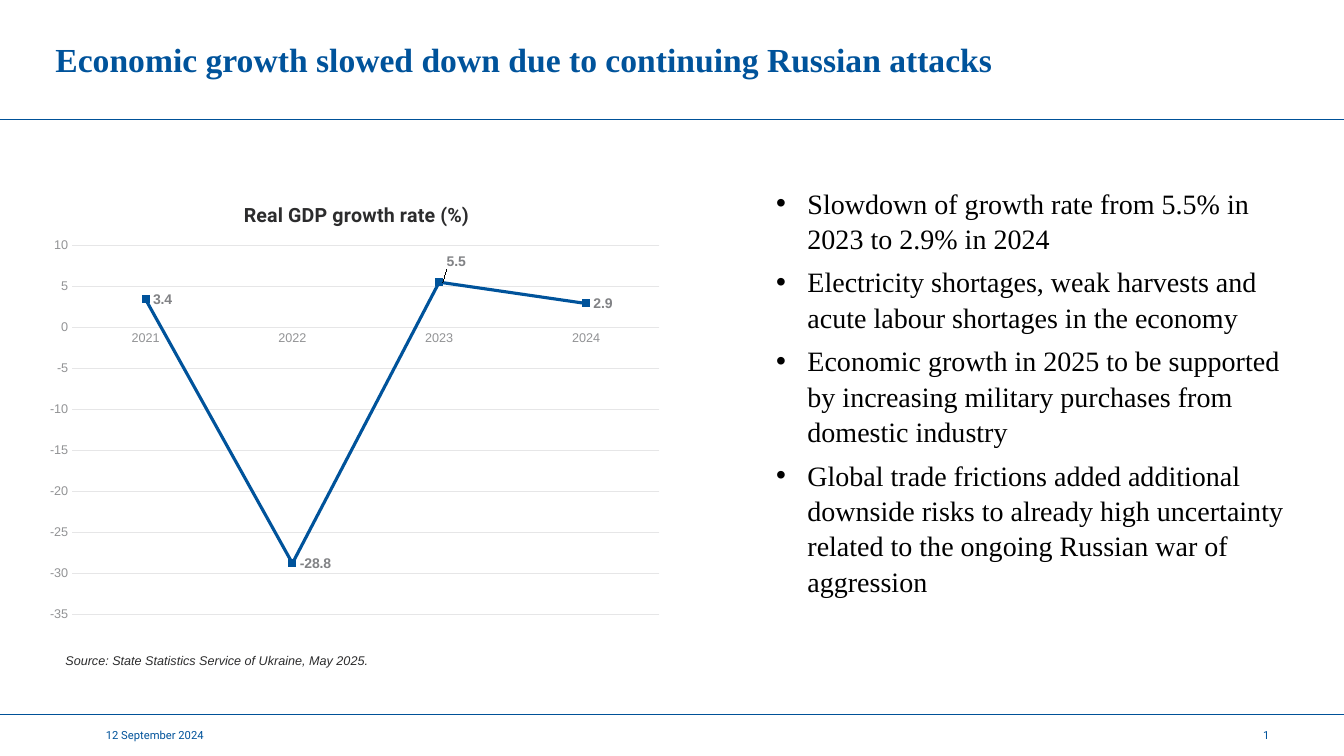
from lxml import etree
from pptx import Presentation
from pptx.chart.data import CategoryChartData
from pptx.dml.color import RGBColor
from pptx.enum.chart import XL_CHART_TYPE, XL_LABEL_POSITION, XL_TICK_MARK
from pptx.enum.shapes import MSO_CONNECTOR
from pptx.enum.text import MSO_ANCHOR, PP_ALIGN
from pptx.oxml import parse_xml
from pptx.oxml.ns import nsdecls, qn
from pptx.util import Inches, Pt

TITLE = "Economic growth slowed down due to continuing Russian attacks"
POINTS = [
    "Slowdown of growth rate from 5.5% in 2023 to 2.9% in 2024",
    "Electricity shortages, weak harvests and acute labour shortages in the economy",
    "Economic growth in 2025 to be supported by increasing military purchases from domestic industry",
    "Global trade frictions added additional downside risks to already high uncertainty "
    "related to the ongoing Russian war of aggression",
]
CHART_TITLE = "Real GDP growth rate (%)"
GROWTH = {"2021": 3.4, "2022": -28.8, "2023": 5.5, "2024": 2.9}
RAISED_LABEL = 2
SOURCE = "Source: State Statistics Service of Ukraine, May 2025."
DATE, PAGE = "12 September 2024", "1"

COLORS = {"blue": "00539B", "rule": "005198", "dark": "2C2C2D", "black": "000000",
          "axis": "929395", "label": "818285", "grid": "E6E6E7", "text": "58595B"}
SERIF, SANS, ROBOTO = "Times New Roman", "Arial", "Roboto"
WIDTH, HEIGHT = 13.33, 7.5
HEADER, FOOTER = 1.18, 7.09
MARGIN, BODY_TOP, INDENT = 0.55, 1.78, 0.31
CHART_LEFT, CHART_WIDTH, CHART_HEIGHT = 0.37, 6.29, 4.48


def color(name):
    return RGBColor.from_string(COLORS[name])


def style(font, size, face, tint, bold=False, italic=False):
    font.size, font.name, font.bold, font.italic = Pt(size), face, bold, italic
    font.color.rgb = color(tint)


def add_text(slide, box, lines, look, inset=True, anchor=MSO_ANCHOR.TOP,
             align=PP_ALIGN.LEFT, bulleted=False):
    frame = slide.shapes.add_textbox(*map(Inches, box)).text_frame
    frame.word_wrap = True
    frame.vertical_anchor = anchor
    if not inset:
        frame.margin_left = frame.margin_right = frame.margin_top = frame.margin_bottom = 0
    for i, line in enumerate(lines):
        paragraph = frame.add_paragraph() if i else frame.paragraphs[0]
        paragraph.alignment = align
        if bulleted:
            paragraph.space_after = Pt(6)
            paragraph.line_spacing = 1.05
            properties = paragraph._p.get_or_add_pPr()
            properties.set("marL", str(Inches(INDENT)))
            properties.set("indent", str(-Inches(INDENT)))
            etree.SubElement(properties, qn("a:buFont"), typeface=SANS)
            etree.SubElement(properties, qn("a:buChar"), char="•")
        run = paragraph.add_run()
        run.text = line
        style(run.font, *look)


def add_rule(slide, y):
    rule = slide.shapes.add_connector(MSO_CONNECTOR.STRAIGHT, 0, Inches(y), Inches(WIDTH), Inches(y))
    rule.line.color.rgb = color("rule")
    rule.line.width = Pt(0.25)
    etree.SubElement(rule._element.spPr, qn("a:effectLst"))


def manual_layout(inner=False, **shares):
    """Chart layout element placing a part by shares of the chart's size."""
    target = '<c:layoutTarget val="inner"/>' if inner else ""
    modes = '<c:xMode val="edge"/><c:yMode val="edge"/>' if shares.pop("edge", True) else ""
    values = "".join(f'<c:{key} val="{value}"/>' for key, value in shares.items())
    return parse_xml(f'<c:layout {nsdecls("c")}><c:manualLayout>{target}{modes}{values}'
                     '</c:manualLayout></c:layout>')


def place(parent, layout, after=None):
    for old in parent.findall(qn("c:layout")):
        parent.remove(old)
    if after is None:
        parent.insert(0, layout)
    else:
        parent.find(qn(after)).addnext(layout)


def add_growth_chart(slide):
    data = CategoryChartData()
    data.categories = list(GROWTH)
    data.add_series("Series 1", list(GROWTH.values()))
    box = map(Inches, (CHART_LEFT, BODY_TOP, CHART_WIDTH, CHART_HEIGHT))
    chart = slide.shapes.add_chart(XL_CHART_TYPE.LINE, *box, data).chart
    style(chart.font, 10, SANS, "text")
    chart.has_legend = False

    heading = chart.chart_title.text_frame.paragraphs[0].add_run()
    heading.text = CHART_TITLE
    style(heading.font, 14, ROBOTO, "dark", bold=True)
    place(chart.chart_title._element, manual_layout(x=0.32, y=0.04), after="c:tx")
    chart.chart_title.include_in_layout = False
    place(chart._chartSpace.chart.plotArea,
          manual_layout(inner=True, x=0.055, y=0.146, w=0.926, h=0.817))

    years, rates = chart.category_axis, chart.value_axis
    for axis in (years, rates):
        axis.major_tick_mark = axis.minor_tick_mark = XL_TICK_MARK.NONE
        style(axis.tick_labels.font, 9, SANS, "axis")
    rates.minimum_scale, rates.maximum_scale, rates.major_unit = -35, 10, 5
    rates.format.line.fill.background()
    for line in (years.format.line, rates.major_gridlines.format.line):
        line.color.rgb = color("grid")
        line.width = Pt(0.75)

    plot = chart.plots[0]
    plot.vary_by_categories = False
    growth = plot.series[0]
    growth.smooth = False
    growth.marker.style = None
    growth.format.line.color.rgb = color("blue")
    growth.format.line.width = Pt(2.25)
    labels = growth.data_labels
    labels.show_value = True
    raised = growth.points[RAISED_LABEL].data_label
    for label in (labels, raised):
        label.position = XL_LABEL_POSITION.RIGHT
        style(label.font, 10, SANS, "label", bold=True)
    place(growth._element.find(".//" + qn("c:dLbl")),
          manual_layout(edge=False, x=0, y=-0.046), after="c:idx")


def main():
    deck = Presentation()
    deck.slide_width, deck.slide_height = Inches(WIDTH), Inches(HEIGHT)
    slide = deck.slides.add_slide(deck.slide_layouts[6])
    for y in (HEADER, FOOTER):
        add_rule(slide, y)
    middle = {"inset": False, "anchor": MSO_ANCHOR.MIDDLE}
    small = (8, ROBOTO, "blue")
    footer_height = HEIGHT - FOOTER
    add_text(slide, (MARGIN, 0, 10.17, HEADER), [TITLE], (24, SERIF, "blue", True), **middle)
    add_growth_chart(slide)
    add_text(slide, (MARGIN, 6.43, CHART_WIDTH, 0.25), [SOURCE], (9, SANS, "dark", False, True))
    add_text(slide, (7.6, BODY_TOP, 5.25, 4.06), POINTS, (20, SERIF, "black"), bulleted=True)
    add_text(slide, (1.05, FOOTER, 2.73, footer_height), [DATE], small, **middle)
    add_text(slide, (12.07, FOOTER, 0.52, footer_height), [PAGE], small,
             align=PP_ALIGN.RIGHT, **middle)
    deck.save("out.pptx")


if __name__ == "__main__":
    main()
